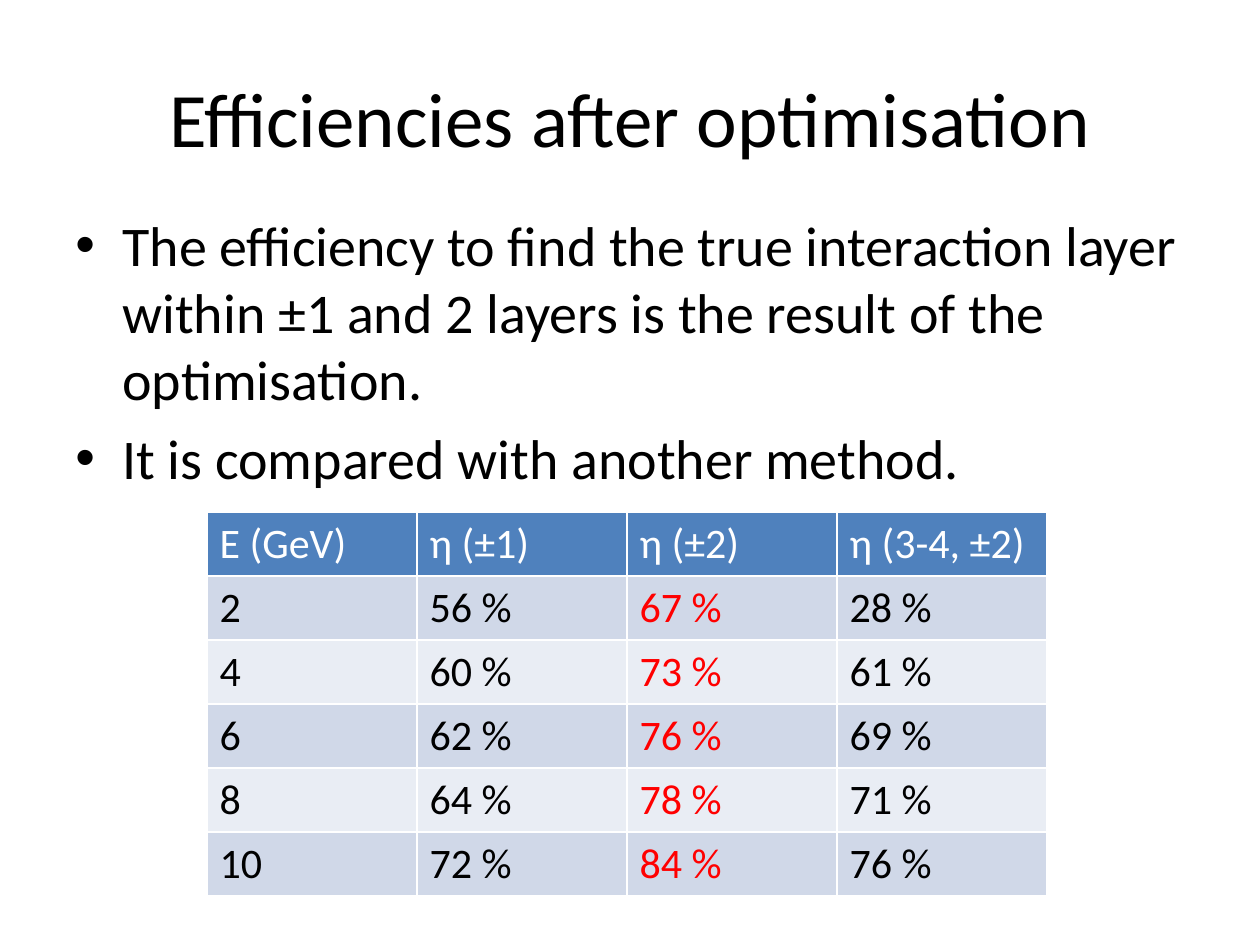
from lxml.etree import SubElement
from pptx import Presentation
from pptx.dml.color import RGBColor
from pptx.enum.text import MSO_ANCHOR, PP_ALIGN
from pptx.oxml.ns import qn
from pptx.util import Pt

PX = 914400 // 126  # EMU per pixel
FONT = "Calibri"


def color(hex_code):
    return RGBColor.from_string(hex_code)


def style(paragraph, size, hex_code):
    font = paragraph.font
    font.name, font.size, font.bold = FONT, Pt(size), False
    font.color.rgb = color(hex_code)


deck = Presentation()
deck.slide_width, deck.slide_height = 1260 * PX, 945 * PX
slide = deck.slides.add_slide(deck.slide_layouts[5])

# Title
title = slide.shapes.title
title.left, title.top, title.width, title.height = 63 * PX, 38 * PX, 1134 * PX, 158 * PX
title.text_frame.text = "Efficiencies after optimisation"
title.text_frame.vertical_anchor = MSO_ANCHOR.MIDDLE
title.text_frame.paragraphs[0].alignment = PP_ALIGN.CENTER
style(title.text_frame.paragraphs[0], 44, "000000")

# Bulleted statements
statements = [
    "The efficiency to find the true interaction layer within ±1 and 2 layers "
    "is the result of the optimisation.",
    "It is compared with another method.",
]
body = slide.shapes.add_textbox(63 * PX, 204 * PX, 1134 * PX, 311 * PX).text_frame
body.word_wrap = True
for i, statement in enumerate(statements):
    paragraph = body.add_paragraph() if i else body.paragraphs[0]
    paragraph.text = statement
    props = paragraph._p.get_or_add_pPr()
    props.set("marL", str(47 * PX))
    props.set("indent", str(-47 * PX))
    SubElement(props, qn("a:buFont")).set("typeface", "Arial")
    SubElement(props, qn("a:buChar")).set("char", "•")
    if i:
        paragraph.space_before = Pt(6.4)
    style(paragraph, 32, "000000")

# Efficiency table: the default table style supplies the white cell borders
rows = [
    ["E (GeV)", "η (±1)", "η (±2)", "η (3-4, ±2)"],
    ["2", "56 %", "67 %", "28 %"],
    ["4", "60 %", "73 %", "61 %"],
    ["6", "62 %", "76 %", "69 %"],
    ["8", "64 %", "78 %", "71 %"],
    ["10", "72 %", "84 %", "76 %"],
]
HIGHLIGHT_COLUMN = 2
efficiencies = slide.shapes.add_table(
    len(rows), len(rows[0]), 207 * PX, 512 * PX, 840 * PX, 384 * PX
).table
for r, row in enumerate(rows):
    for c, value in enumerate(row):
        cell = efficiencies.cell(r, c)
        cell.text = value
        cell.fill.solid()
        if r == 0:
            fill, ink = "4F81BD", "FFFFFF"
        else:
            fill = "D0D8E8" if r % 2 else "E9EDF4"
            ink = "FF0000" if c == HIGHLIGHT_COLUMN else "000000"
        cell.fill.fore_color.rgb = color(fill)
        style(cell.text_frame.paragraphs[0], 24, ink)

deck.save("out.pptx")
